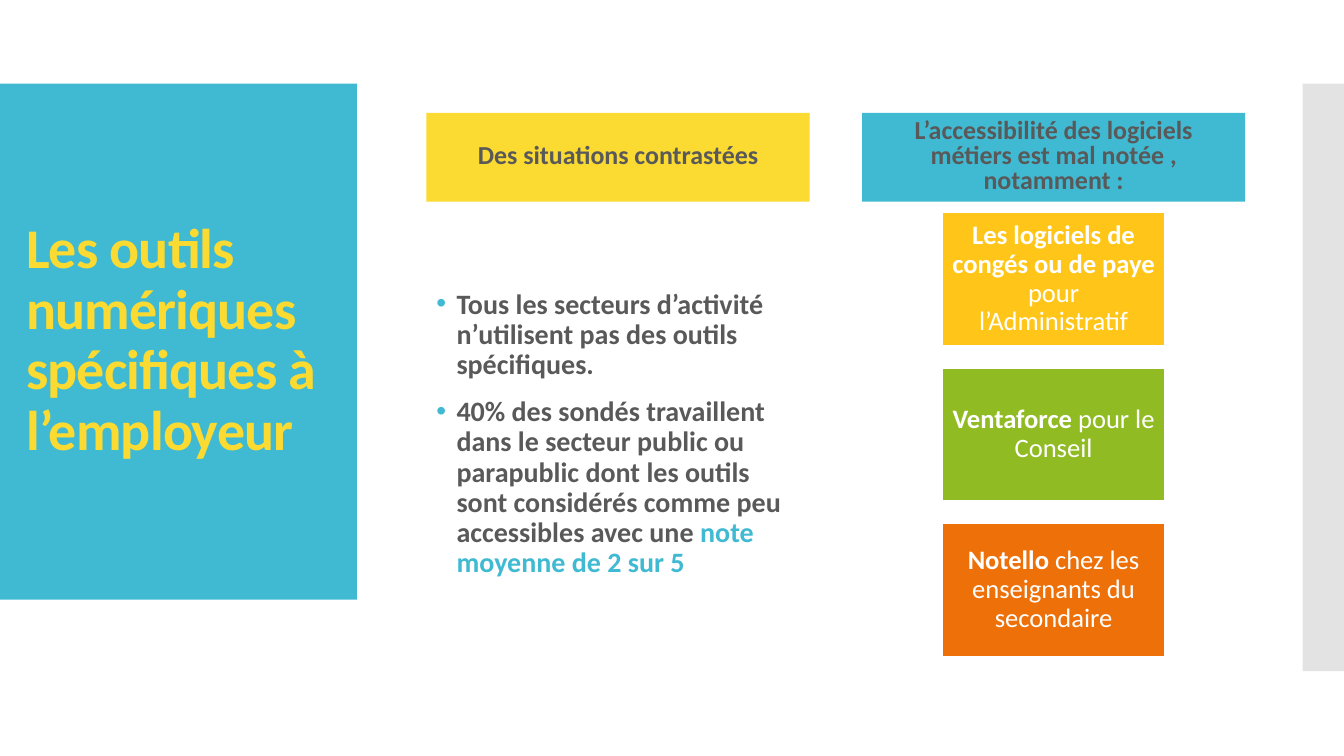
from lxml.etree import SubElement
from pptx import Presentation
from pptx.dml.color import RGBColor
from pptx.enum.shapes import MSO_SHAPE
from pptx.enum.text import MSO_ANCHOR, MSO_AUTO_SIZE, PP_ALIGN
from pptx.oxml.ns import qn
from pptx.util import Inches, Pt

COLOURS = {
    "blue": "40BAD2",
    "yellow": "FBDA32",
    "amber": "FFC619",
    "green": "90BB23",
    "orange": "EE7008",
    "band": "E3E3E3",
    "grey": "595959",
    "white": "FFFFFF",
}
COLUMN_WIDTH = 3.8
LEFT_COLUMN, RIGHT_COLUMN = 4.23, 8.55
HEADING_TOP, CONTENT_TOP = 1.12, 2.11
CARD_LEFT, CARD_WIDTH, CARD_HEIGHT, CARD_PITCH = 9.35, 2.2, 1.32, 1.54

SITUATIONS = [
    [("Tous les secteurs d’activité n’utilisent pas des outils spécifiques.", "grey")],
    [
        ("40% des sondés travaillent dans le secteur public ou parapublic dont les "
         "outils sont considérés comme peu accessibles avec une ", "grey"),
        ("note moyenne de 2 sur 5", "blue"),
    ],
]
SOFTWARE = [
    ("amber", "Les logiciels de congés ou de paye ", "pour l’Administratif"),
    ("green", "Ventaforce", " pour le Conseil"),
    ("orange", "Notello", " chez les enseignants du secondaire"),
]


def rgb(name):
    """Return the named colour."""
    return RGBColor.from_string(COLOURS[name])


def place(shape, left, top, width, height):
    """Set the position and size of a shape in inches."""
    shape.left, shape.top = Inches(left), Inches(top)
    shape.width, shape.height = Inches(width), Inches(height)


def prepare_frame(frame, inset=0.1):
    """Make a text frame wrap, centre vertically and keep its size."""
    frame.word_wrap = True
    frame.auto_size = MSO_AUTO_SIZE.NONE
    frame.vertical_anchor = MSO_ANCHOR.MIDDLE
    frame.margin_left = frame.margin_right = Inches(inset)
    frame.margin_top = frame.margin_bottom = Inches(min(inset, 0.05))


def style(paragraph, size, colour, spacing, align=PP_ALIGN.CENTER):
    """Set the font, line spacing and alignment of a paragraph."""
    paragraph.alignment = align
    paragraph.line_spacing = spacing
    paragraph.font.name = "Calibri"
    paragraph.font.size = Pt(size)
    paragraph.font.bold = True
    paragraph.font.color.rgb = rgb(colour)


def add_block(slide, left, top, width, height, fill):
    """Add a plain filled rectangle."""
    block = slide.shapes.add_shape(
        MSO_SHAPE.RECTANGLE, Inches(left), Inches(top), Inches(width), Inches(height))
    block.shadow.inherit = False
    block.fill.solid()
    block.fill.fore_color.rgb = rgb(fill)
    block.line.fill.background()
    return block


def set_title(slide, wording):
    """Place the title in front of its panel and format it."""
    title = slide.shapes.title
    place(title, 0.16, 0.87, 3.22, 5.03)
    prepare_frame(title.text_frame)
    title.text_frame.text = wording
    paragraph = title.text_frame.paragraphs[0]
    style(paragraph, 40, "yellow", 0.9, PP_ALIGN.LEFT)
    paragraph.runs[0].font._element.set("spc", "-60")
    slide.shapes.element.append(title.element)


def add_heading(slide, left, fill, wording):
    """Add the coloured heading of a column."""
    heading = add_block(slide, left, HEADING_TOP, COLUMN_WIDTH, 0.88, fill)
    prepare_frame(heading.text_frame)
    heading.text_frame.text = wording
    style(heading.text_frame.paragraphs[0], 18.5, "grey", 0.8)


def add_bullet(paragraph):
    """Give a paragraph a blue bullet with a hanging indent."""
    properties = paragraph._p.get_or_add_pPr()
    properties.set("marL", str(Inches(0.2)))
    properties.set("indent", str(Inches(-0.2)))
    bullet_colour = SubElement(properties, qn("a:buClr"))
    SubElement(bullet_colour, qn("a:srgbClr")).set("val", COLOURS["blue"])
    SubElement(properties, qn("a:buFont")).set("typeface", "Arial")
    SubElement(properties, qn("a:buChar")).set("char", "•")


def add_bullet_list(slide, items):
    """Add the bulleted findings of the left column."""
    findings = slide.shapes.add_textbox(
        Inches(LEFT_COLUMN), Inches(CONTENT_TOP), Inches(COLUMN_WIDTH), Inches(4.4))
    frame = findings.text_frame
    prepare_frame(frame)
    for index, pieces in enumerate(items):
        paragraph = frame.add_paragraph() if index else frame.paragraphs[0]
        paragraph.space_before = Pt(12)
        paragraph.line_spacing = 0.9
        add_bullet(paragraph)
        style(paragraph, 20, "grey", 0.9, PP_ALIGN.LEFT)
        for wording, colour in pieces:
            run = paragraph.add_run()
            run.text = wording
            run.font.color.rgb = rgb(colour)


def add_card(slide, top, fill, software, audience):
    """Add a card naming software in bold and then its audience."""
    card = add_block(slide, CARD_LEFT, top, CARD_WIDTH, CARD_HEIGHT, fill)
    card.line.color.rgb = rgb("white")
    card.line.width = Pt(0.85)
    prepare_frame(card.text_frame, 0.08)
    paragraph = card.text_frame.paragraphs[0]
    style(paragraph, 19, "white", 0.9)
    for wording, bold in ((software, True), (audience, False)):
        run = paragraph.add_run()
        run.text = wording
        run.font.bold = bold


def main():
    """Build the slide and save it."""
    presentation = Presentation()
    presentation.slide_width, presentation.slide_height = Inches(13.33), Inches(7.5)
    slide = presentation.slides.add_slide(presentation.slide_layouts[5])
    add_block(slide, 0, 0.83, 3.54, 5.12, "blue")
    add_block(slide, 12.92, 0.83, 0.41, 5.83, "band")
    set_title(slide, "Les outils numériques spécifiques à l’employeur")
    add_heading(slide, LEFT_COLUMN, "yellow", "Des situations contrastées")
    add_bullet_list(slide, SITUATIONS)
    add_heading(slide, RIGHT_COLUMN, "blue",
                "L’accessibilité des logiciels métiers est mal notée , notamment :")
    for row, (fill, software, audience) in enumerate(SOFTWARE):
        add_card(slide, CONTENT_TOP + row * CARD_PITCH, fill, software, audience)
    presentation.save("out.pptx")


if __name__ == "__main__":
    main()
